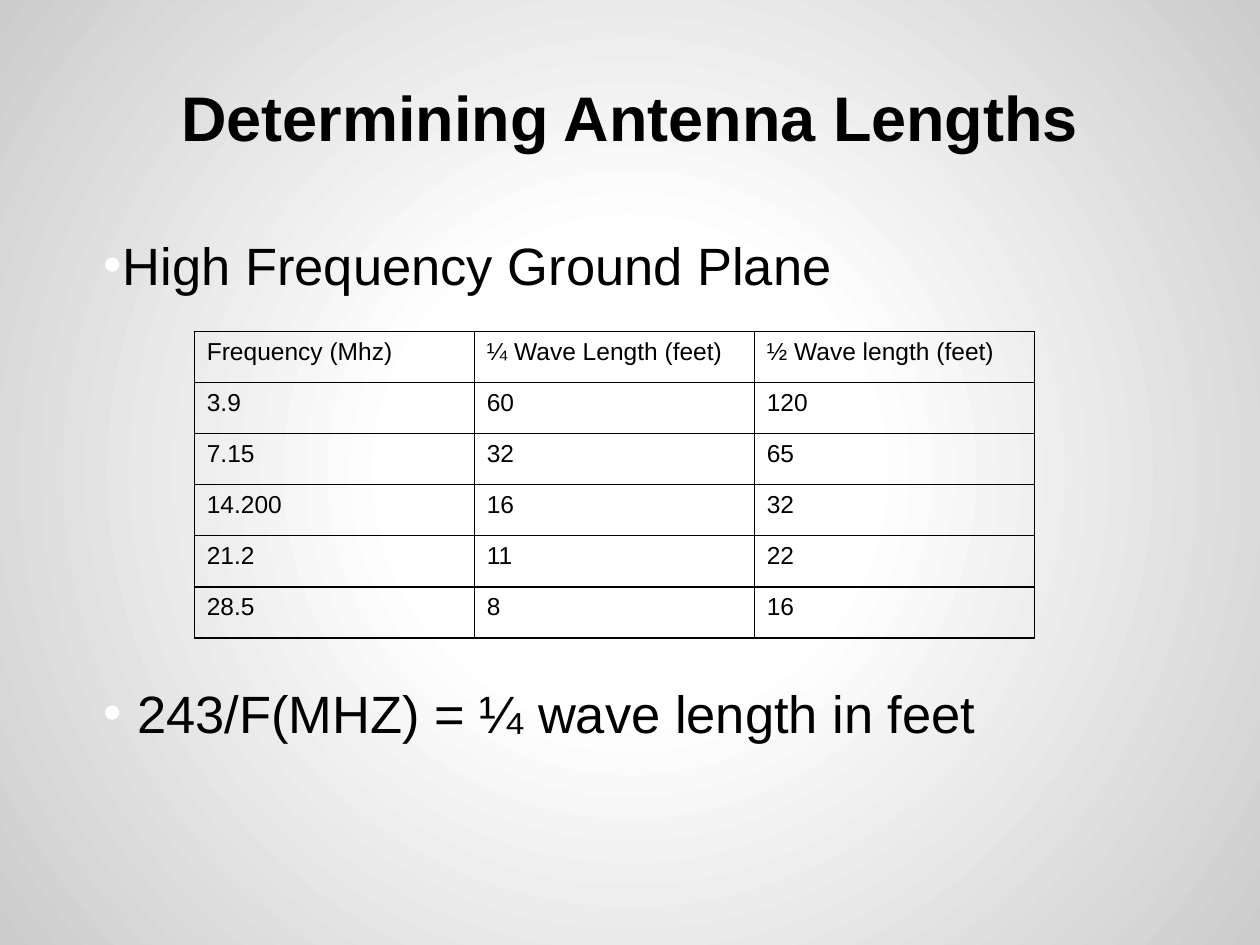
from dataclasses import dataclass

from lxml import etree
from pptx import Presentation
from pptx.dml.color import RGBColor as Color
from pptx.enum.text import MSO_ANCHOR as Anchor, MSO_AUTO_SIZE as AutoSize, PP_ALIGN as Align
from pptx.oxml import parse_xml
from pptx.oxml.ns import nsdecls, qn
from pptx.util import Pt

# Content
TITLE = "Determining Antenna Lengths"
BULLETS = [  # text, space before
    ("High Frequency Ground Plane", 6.4),
    (" 243/F(MHZ) = ¼ wave length in feet", 220),  # leaves room for the table
]
ROWS = [
    ("Frequency (Mhz)", "¼ Wave Length (feet)", "½ Wave length (feet)"),
    ("3.9", "60", "120"),
    ("7.15", "32", "65"),
    ("14.200", "16", "32"),
    ("21.2", "11", "22"),
    ("28.5", "8", "16"),
]


@dataclass
class Theme:
    font: str = "Arial"
    ink: str = "000000"
    bullet: str = "FFFFFF"
    glow: str = "FFFFFF"
    edge: str = "CCCCCC"
    title_size: float = 36
    body_size: float = 30
    table_size: float = 14
    border: float = 0.75
    inset: float = 7.2


theme = Theme()


def style_text(para, size, bold=False):
    for span in para.runs:
        span.font.name = theme.font
        span.font.size = Pt(size)
        span.font.bold = bold
        span.font.color.rgb = Color.from_string(theme.ink)


def place(box, left, top, width, height):
    box.left, box.top, box.width, box.height = Pt(left), Pt(top), Pt(width), Pt(height)
    frame = box.text_frame
    frame.auto_size = AutoSize.NONE
    frame.word_wrap = True
    frame.margin_left = frame.margin_right = Pt(theme.inset)
    frame.margin_top = frame.margin_bottom = Pt(theme.inset)
    return frame


def add_bullet(para):
    props = para._p.get_or_add_pPr()
    props.set("marL", str(Pt(27)))
    props.set("indent", str(Pt(-10.8)))
    color = etree.SubElement(props, qn("a:buClr"))
    etree.SubElement(color, qn("a:srgbClr"), val=theme.bullet)
    etree.SubElement(props, qn("a:buFont"), typeface=theme.font)
    etree.SubElement(props, qn("a:buChar"), char="•")


def add_borders(cell):
    props = cell._tc.get_or_add_tcPr()
    for side in ("lnL", "lnR", "lnT", "lnB"):
        line = etree.SubElement(props, qn(f"a:{side}"), w=str(Pt(theme.border)))
        fill = etree.SubElement(line, qn("a:solidFill"))
        etree.SubElement(fill, qn("a:srgbClr"), val=theme.ink)


deck = Presentation()
deck.slide_width, deck.slide_height = Pt(720), Pt(540)
page = deck.slides.add_slide(deck.slide_layouts[1])

# Background: radial gradient, light in the centre
fill = page.background.fill
fill.gradient()
gradient = page._element.find(".//" + qn("a:gradFill"))
stops = "".join(
    f'<a:gs pos="{position * 1000}"><a:srgbClr val="{color}"/></a:gs>'
    for position, color in [(0, theme.glow), (30, theme.glow), (100, theme.edge)]
)
gradient.getparent().replace(gradient, parse_xml(
    f'<a:gradFill {nsdecls("a")} rotWithShape="1"><a:gsLst>{stops}</a:gsLst>'
    '<a:path path="circle"><a:fillToRect l="50000" t="50000" r="50000" b="50000"/></a:path>'
    "</a:gradFill>"
))

# Title
frame = place(page.shapes.title, 36, 21.6, 648, 90)
frame.text = TITLE
frame.vertical_anchor = Anchor.MIDDLE
frame.paragraphs[0].alignment = Align.CENTER
style_text(frame.paragraphs[0], theme.title_size, bold=True)

# Bullets above and below the table
frame = place(page.placeholders[1], 36, 126, 648, 356.4)
frame.vertical_anchor = Anchor.TOP
frame.text = "\n".join(text for text, _ in BULLETS)
for para, (_, gap) in zip(frame.paragraphs, BULLETS):
    para.space_before = Pt(gap)
    add_bullet(para)
    style_text(para, theme.body_size)

# Table of wave lengths
table = page.shapes.add_table(
    len(ROWS), len(ROWS[0]), Pt(111), Pt(189.4), Pt(480), Pt(175.2)
).table
table.first_row = table.horz_banding = False
for row, texts in zip(table.rows, ROWS):
    for cell, text in zip(row.cells, texts):
        cell.text = text
        style_text(cell.text_frame.paragraphs[0], theme.table_size)
        add_borders(cell)
        cell.fill.background()

deck.save("out.pptx")
